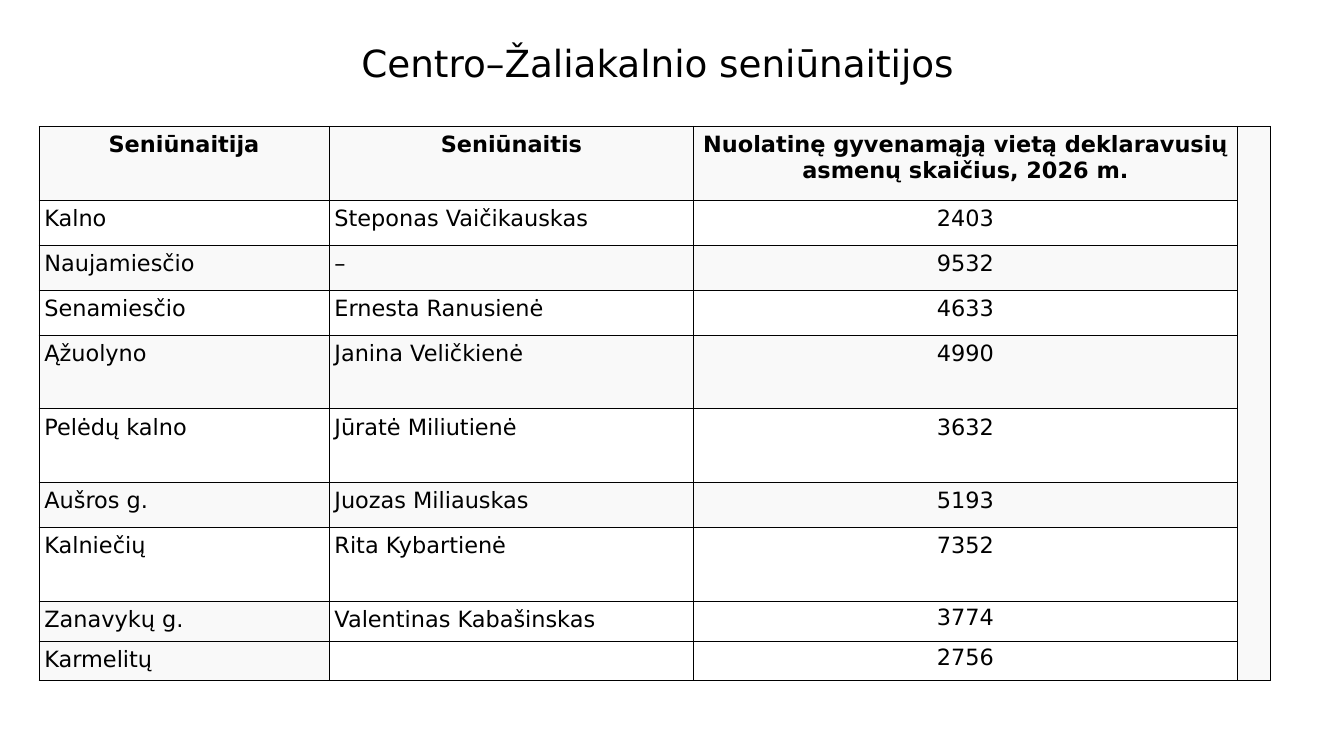
from dataclasses import dataclass

from lxml import etree
from pptx import Presentation
from pptx.dml.color import RGBColor
from pptx.enum.text import MSO_ANCHOR, PP_ALIGN
from pptx.oxml.ns import qn
from pptx.util import Inches, Pt

LEFT, CENTER = PP_ALIGN.LEFT, PP_ALIGN.CENTER
TOP, MIDDLE = MSO_ANCHOR.TOP, MSO_ANCHOR.MIDDLE
TITLE_ONLY = 5


@dataclass(frozen=True)
class Theme:
    """Colours, type sizes and line widths of the slide."""

    font: str = "DejaVu Sans"
    ink: str = "000000"
    band: str = "F9F9F9"
    paper: str = "FFFFFF"
    title_size: int = 40
    table_size: int = 24
    border: int = 1


THEME = Theme()
WIDTH, HEIGHT = 20, 11.25
TITLE_BOX = (0.5, 0.3, 18.75, 1.25)
TABLE_BOX = (0.58, 1.88, 18.33, 8.25)
COLUMNS = (4.32, 5.43, 8.09, 0.5)
TALL, NORMAL, SHORT = 1.1, 0.67, 0.59
WIDE_INSETS = (0.08, 0.08)
NARROW_INSETS = (0.09, 0.05)
TITLE = "Centro–Žaliakalnio seniūnaitijos "
HEADER = (
    "Seniūnaitija",
    "Seniūnaitis",
    "Nuolatinę gyvenamąją vietą deklaravusių asmenų skaičius, 2026 m.",
)
WARDS = [
    ("Kalno", "Steponas Vaičikauskas", "2403", NORMAL),
    ("Naujamiesčio", "–", "9532", NORMAL),
    ("Senamiesčio", "Ernesta Ranusienė", "4633", NORMAL),
    ("Ąžuolyno", "Janina Veličkienė", "4990", TALL),
    ("Pelėdų kalno", "Jūratė Miliutienė", "3632", TALL),
    ("Aušros g.", "Juozas Miliauskas", "5193", NORMAL),
    ("Kalniečių", "Rita Kybartienė", "7352", TALL),
    ("Zanavykų g.", "Valentinas Kabašinskas", "3774", SHORT),
    ("Karmelitų", "", "2756", SHORT),
]


def write(paragraph, text, size, alignment, bold=False):
    """Add one styled run to a paragraph."""
    paragraph.alignment = alignment
    run = paragraph.add_run()
    run.text = text
    run.font.name = THEME.font
    run.font.size = Pt(size)
    run.font.bold = bold
    run.font.color.rgb = RGBColor.from_string(THEME.ink)


def draw_borders(cell):
    """Draw a thin line on all four sides of a cell."""
    properties = cell._tc.get_or_add_tcPr()
    for side in ("a:lnL", "a:lnR", "a:lnT", "a:lnB"):
        line = etree.SubElement(properties, qn(side), w=str(Pt(THEME.border)))
        fill = etree.SubElement(line, qn("a:solidFill"))
        etree.SubElement(fill, qn("a:srgbClr"), val=THEME.ink)


def format_cell(cell, color, insets=WIDE_INSETS):
    """Set the borders, fill and margins of a cell."""
    draw_borders(cell)
    if color:
        cell.fill.solid()
        cell.fill.fore_color.rgb = RGBColor.from_string(color)
    else:
        cell.fill.background()
    cell.margin_left = cell.margin_right = Inches(insets[0])
    cell.margin_top = cell.margin_bottom = Inches(insets[1])
    cell.vertical_anchor = TOP


def add_title(slide, box):
    """Place the slide title in its box."""
    title = slide.shapes.title
    title.left, title.top, title.width, title.height = map(Inches, box)
    title.text_frame.vertical_anchor = MIDDLE
    title.text_frame.word_wrap = True
    write(title.text_frame.paragraphs[0], TITLE, THEME.title_size, CENTER)


def add_ward_table(slide, box):
    """Place the table of wards with a merged narrow column on the right."""
    heights = [TALL] + [ward[-1] for ward in WARDS]
    frame = slide.shapes.add_table(len(heights), len(COLUMNS), *map(Inches, box))
    table = frame.table
    table.first_row = table.horz_banding = False
    for column, width in zip(table.columns, COLUMNS):
        column.width = Inches(box[2] * width / sum(COLUMNS))
    for row, height in zip(table.rows, heights):
        row.height = Inches(box[3] * height / sum(heights))

    for row_index, texts in enumerate([HEADER] + [ward[:3] for ward in WARDS]):
        is_header = row_index == 0
        is_short = heights[row_index] == SHORT
        banded = is_header or is_short or row_index % 2 == 0
        for column_index, text in enumerate(texts):
            cell = table.cell(row_index, column_index)
            color = THEME.band if banded else THEME.paper
            if is_short and column_index > 0:
                color = None
            is_count = column_index == 2
            format_cell(cell, color, NARROW_INSETS if is_short and is_count else WIDE_INSETS)
            if text:
                alignment = CENTER if is_header or is_count else LEFT
                write(cell.text_frame.paragraphs[0], text, THEME.table_size, alignment, is_header)

    last_column = len(COLUMNS) - 1
    for row_index in range(len(heights)):
        format_cell(table.cell(row_index, last_column), THEME.band)
    table.cell(0, last_column).merge(table.cell(len(heights) - 1, last_column))


def main():
    """Build and save the presentation."""
    presentation = Presentation()
    presentation.slide_width, presentation.slide_height = Inches(WIDTH), Inches(HEIGHT)
    slide = presentation.slides.add_slide(presentation.slide_layouts[TITLE_ONLY])
    slide.background.fill.solid()
    slide.background.fill.fore_color.rgb = RGBColor.from_string(THEME.paper)
    add_title(slide, TITLE_BOX)
    add_ward_table(slide, TABLE_BOX)
    presentation.save("out.pptx")


if __name__ == "__main__":
    main()
